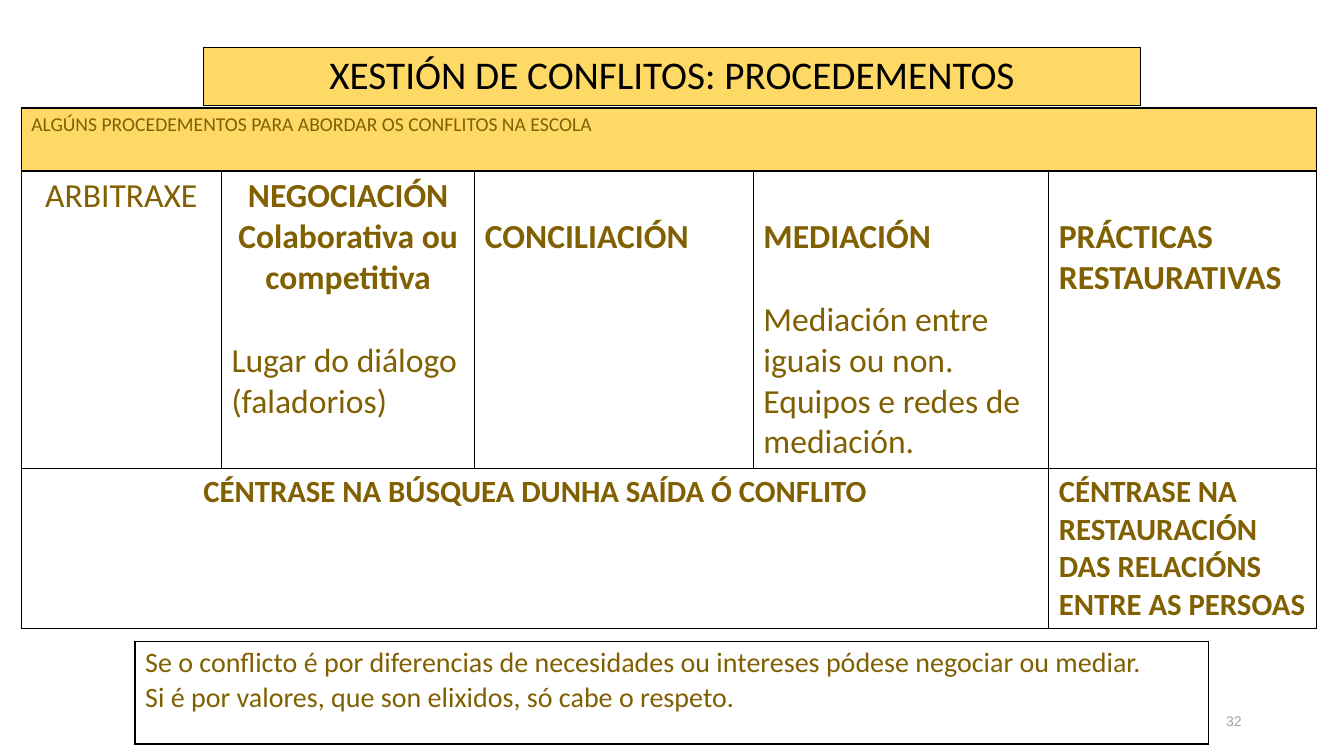
import lxml.etree
import pptx
import pptx.dml.color
import pptx.enum.text
import pptx.oxml.ns
import pptx.util

Pt = pptx.util.Pt
ALIGN = pptx.enum.text.PP_ALIGN
GOLD, BROWN, BLACK, WHITE, GREY = "FFD966", "806000", "000000", "FFFFFF", "A7A399"
LINE_GAP = 29.3
CELL_MARGINS = {"margin_left": 7.2, "margin_right": 7.2, "margin_bottom": 3.6}


def color(value):
    """Turn a hex string into a colour."""
    return pptx.dml.color.RGBColor.from_string(value)


def apply_format(target, values):
    """Set each attribute named in values on target."""
    for name, value in values.items():
        setattr(target, name, value)


def write_paragraphs(text_frame, lines, size, hex_color, font_name="Calibri"):
    """Write lines of (text, bold, alignment, space before)."""
    for index, (text, bold, alignment, space_before) in enumerate(lines):
        paragraph = text_frame.paragraphs[0] if index == 0 else text_frame.add_paragraph()
        apply_format(paragraph, {"alignment": alignment, "space_before": Pt(space_before)})
        run = paragraph.add_run()
        run.text = text
        apply_format(run.font, {"name": font_name, "size": Pt(size), "bold": bold})
        run.font.color.rgb = color(hex_color)


def add_borders(cell):
    """Draw a thin black line on the four sides of a cell."""
    properties = cell._tc.get_or_add_tcPr()
    qualified = pptx.oxml.ns.qn
    for side in ("a:lnL", "a:lnR", "a:lnT", "a:lnB"):
        line = lxml.etree.SubElement(properties, qualified(side), w=str(Pt(1)))
        fill = lxml.etree.SubElement(line, qualified("a:solidFill"))
        lxml.etree.SubElement(fill, qualified("a:srgbClr"), val=BLACK)


def fill_cell(cell, hex_color):
    """Fill a cell, or leave it clear when no colour is given."""
    if hex_color:
        cell.fill.solid()
        cell.fill.fore_color.rgb = color(hex_color)
    else:
        cell.fill.background()


def add_grid(slide, left, top, widths, heights, fills):
    """Add a bordered table with one fill for each row."""
    frame = slide.shapes.add_table(
        len(heights), len(widths), Pt(left), Pt(top), Pt(sum(widths)), Pt(sum(heights)))
    table = frame.table
    apply_format(table, {"first_row": False, "horz_banding": False})
    for column, width in zip(table.columns, widths):
        column.width = Pt(width)
    for row, height, hex_color in zip(table.rows, heights, fills):
        row.height = Pt(height)
        for cell in row.cells:
            add_borders(cell)
            fill_cell(cell, hex_color)
    return table


def write_cell(cell, lines, size, hex_color=BROWN, top_gap=0):
    """Set a cell's margins and write its lines."""
    margins = {**CELL_MARGINS, "margin_top": 3.6 + top_gap}
    apply_format(cell, {name: Pt(value) for name, value in margins.items()})
    write_paragraphs(cell.text_frame, lines, size, hex_color)


def add_procedures(slide):
    """Add the table of procedures."""
    table = add_grid(slide, 15.2, 77.2, [143, 181, 199, 211, 191],
                     [45, 212.5, 114.5], [GOLD, None, WHITE])
    table.cell(0, 0).merge(table.cell(0, 4))
    table.cell(2, 0).merge(table.cell(2, 3))
    write_cell(table.cell(0, 0), [
        ("ALGÚNS PROCEDEMENTOS PARA ABORDAR OS CONFLITOS NA ESCOLA", False, ALIGN.LEFT, 0)], 14)
    procedures = [
        (0, [("ARBITRAXE", False, ALIGN.CENTER, 0)]),
        (0, [("NEGOCIACIÓN", True, ALIGN.CENTER, 0),
             ("Colaborativa ou competitiva", True, ALIGN.CENTER, 0),
             ("Lugar do diálogo (faladorios)", False, ALIGN.LEFT, LINE_GAP)]),
        (LINE_GAP, [("CONCILIACIÓN", True, ALIGN.LEFT, 0)]),
        (LINE_GAP, [("MEDIACIÓN", True, ALIGN.LEFT, 0),
                    ("Mediación entre iguais ou non.", False, ALIGN.LEFT, LINE_GAP),
                    ("Equipos e redes de mediación.", False, ALIGN.LEFT, 0)]),
        (LINE_GAP, [("PRÁCTICAS RESTAURATIVAS", True, ALIGN.LEFT, 0)]),
    ]
    for column, (top_gap, lines) in enumerate(procedures):
        write_cell(table.cell(1, column), lines, 24, top_gap=top_gap)
    write_cell(table.cell(2, 0), [
        ("CÉNTRASE NA BÚSQUEA DUNHA SAÍDA Ó CONFLITO", True, ALIGN.CENTER, 0)], 22)
    write_cell(table.cell(2, 4), [
        ("CÉNTRASE NA RESTAURACIÓN DAS RELACIÓNS ENTRE AS PERSOAS", True, ALIGN.LEFT, 0)], 22)


def add_slide_number(slide):
    """Add the slide number at the lower right."""
    box = slide.shapes.add_textbox(Pt(678), Pt(500.4), Pt(216), Pt(28.8))
    apply_format(box.text_frame, {
        "word_wrap": True, "vertical_anchor": pptx.enum.text.MSO_ANCHOR.MIDDLE})
    write_paragraphs(box.text_frame, [("32", False, ALIGN.RIGHT, 0)], 10, GREY, "Arial")


def main():
    """Build the slide and save it."""
    presentation = pptx.Presentation()
    apply_format(presentation, {"slide_width": Pt(960), "slide_height": Pt(540)})
    slide = presentation.slides.add_slide(presentation.slide_layouts[6])
    add_slide_number(slide)
    title = add_grid(slide, 145.4, 33.8, [669], [41.4], [GOLD])
    write_cell(title.cell(0, 0), [
        ("XESTIÓN DE CONFLITOS: PROCEDEMENTOS", False, ALIGN.CENTER, 0)], 28, BLACK)
    add_procedures(slide)
    advice = add_grid(slide, 96.5, 458, [767], [73.4], [None])
    write_cell(advice.cell(0, 0), [
        ("Se o conflicto é por diferencias de necesidades ou intereses pódese negociar ou mediar.",
         False, ALIGN.LEFT, 0),
        ("Si é por valores, que son elixidos, só cabe o respeto.", False, ALIGN.LEFT, 0)], 20)
    presentation.save("out.pptx")


if __name__ == "__main__":
    main()
